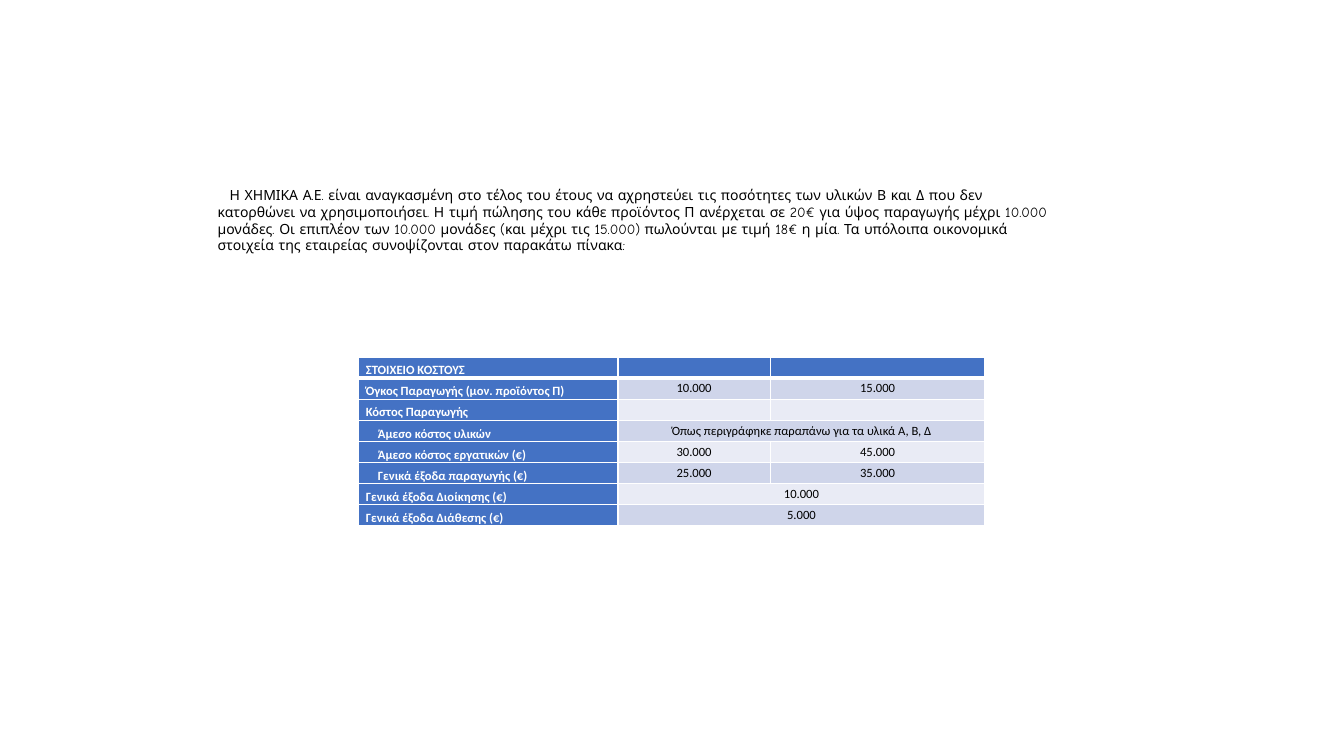
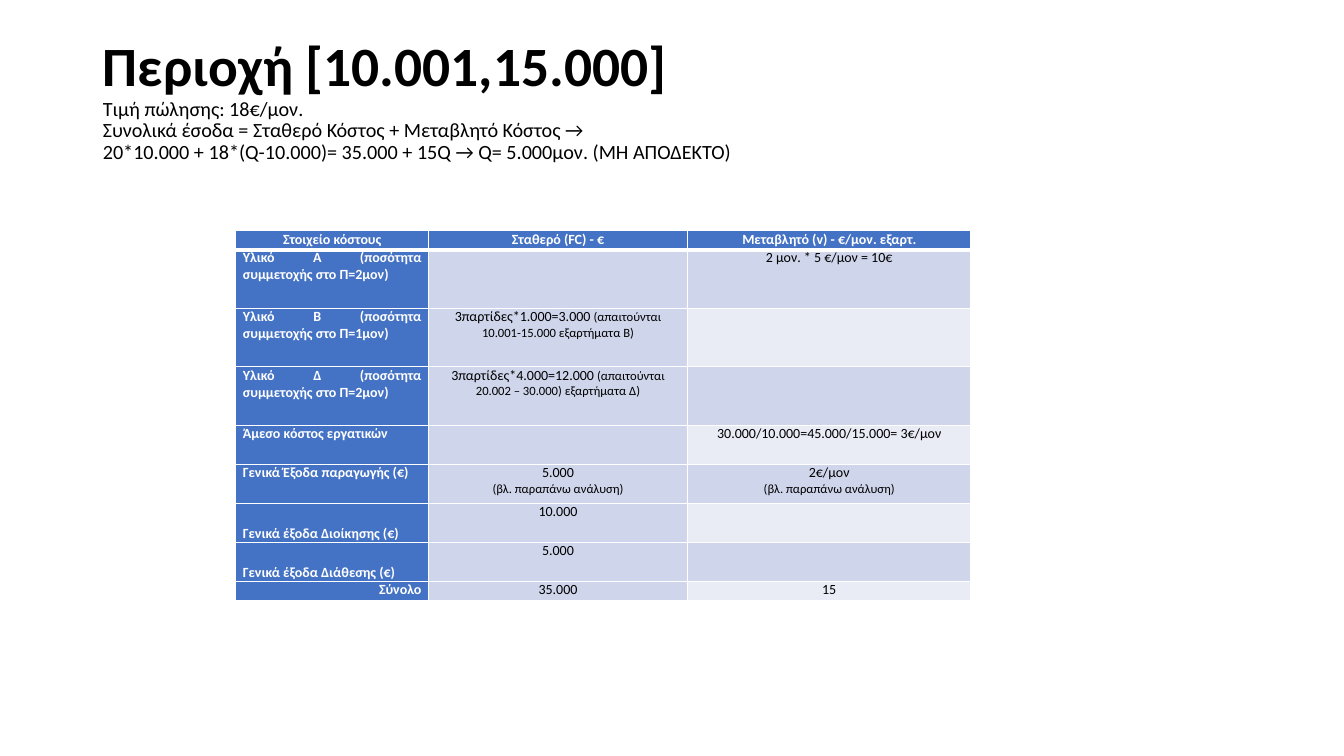
"""Build two slides on break-even costing, each with a cost table."""
from dataclasses import dataclass

from lxml.etree import SubElement
from pptx import Presentation
from pptx.dml.color import RGBColor
from pptx.enum.text import MSO_ANCHOR as Anchor, MSO_AUTO_SIZE as AutoSize, PP_ALIGN as Align
from pptx.oxml.ns import qn
from pptx.util import Inches, Length, Pt


@dataclass(frozen=True)
class Theme:
    """Colours, fonts and type sizes shared by the slides."""
    ink: str = "000000"
    paper: str = "FFFFFF"
    accent: str = "4472C4"
    dark_band: str = "CFD5EA"
    light_band: str = "E9EBF5"
    font: str = "Calibri"
    story_font: str = "Comic Neue"
    title_size: float = 39.6
    subtitle_size: float = 14.4
    text_size: float = 10
    small_size: float = 9
    rule: float = 1
    header_rule: float = 3
    indent: float = 0.12
    cell_inset: float = 0.07


THEME = Theme()
WIDTH, HEIGHT = Inches(13.33), Inches(7.5)


def across(percent: float) -> Length:
    """Return a percentage of the slide width."""
    return Length(round(WIDTH * percent / 100))


def down(percent: float) -> Length:
    """Return a percentage of the slide height."""
    return Length(round(HEIGHT * percent / 100))


@dataclass(frozen=True)
class Value:
    """A cell's text with an optional small note, inline or below."""
    text: str = ""
    note: str = ""
    note_below: bool = False


@dataclass(frozen=True)
class CostRow:
    """A row label with its values; a single value spans both columns."""
    label: str
    values: tuple[Value, ...]
    height: float
    align: Align = Align.LEFT
    anchor: Anchor = Anchor.TOP
    indented: bool = False


@dataclass(frozen=True)
class CostTable:
    """Place, columns and rows of a table, in percent of the slide."""
    left: float
    top: float
    columns: tuple[float, ...]
    rows: list[CostRow]
    size: float
    value_anchor: Anchor
    first_striped: int


BLANK = Value()
ANALYSIS = "(βλ. παραπάνω ανάλυση)"
STORY = (
    "Η ΧΗΜΙΚΑ Α.Ε. είναι αναγκασμένη στο τέλος του έτους να αχρηστεύει τις ποσότητες των "
    "υλικών Β και Δ που δεν κατορθώνει να χρησιμοποιήσει. Η τιμή πώλησης του κάθε προϊόντος Π "
    "ανέρχεται σε 20€ για ύψος παραγωγής μέχρι 10.000 μονάδες. Οι επιπλέον των 10.000 μονάδες "
    "(και μέχρι τις 15.000) πωλούνται με τιμή 18€ η μία. Τα υπόλοιπα οικονομικά στοιχεία της "
    "εταιρείας συνοψίζονται στον παρακάτω πίνακα:"
)
TITLE = "Περιοχή [10.001,15.000]"
REVENUE_LINES = [
    "Τιμή πώλησης: 18€/μον.",
    "Συνολικά έσοδα = Σταθερό Κόστος + Μεταβλητό Κόστος →",
    "20*10.000 + 18*(Q-10.000)= 35.000 + 15Q → Q= 5.000μον. (MH ΑΠΟΔΕΚΤΟ)",
]


def budget_row(label: str, *values: str, indented: bool = False, height: float = 2.8) -> CostRow:
    """Return a row of the company's cost data."""
    return CostRow(label, tuple(map(Value, values)), height, anchor=Anchor.BOTTOM, indented=indented)


def material_row(name: str, units: int, fixed: Value, variable: Value) -> CostRow:
    """Return a row for a material and its share in the product."""
    label = f"Υλικό {name} (ποσότητα συμμετοχής στο Π={units}μον)"
    return CostRow(label, (fixed, variable), 7.75, Align.JUSTIFY)


def expense_row(label: str, fixed: Value, variable: Value = BLANK,
                anchor: Anchor = Anchor.TOP) -> CostRow:
    """Return a row for labour or overheads."""
    return CostRow(label, (fixed, variable), 5.17, Align.JUSTIFY, anchor)


BUDGET = CostTable(
    left=26.7, top=47.33, columns=(19.28, 11.33, 15.98), size=THEME.small_size,
    value_anchor=Anchor.MIDDLE, first_striped=1,
    rows=[
        budget_row("ΣΤΟΙΧΕΙΟ ΚΟΣΤΟΥΣ", "", "", height=2.67),
        budget_row("Όγκος Παραγωγής (μον. προϊόντος Π)", "10.000", "15.000"),
        budget_row("Κόστος Παραγωγής", "", ""),
        budget_row("Άμεσο κόστος υλικών", "Όπως περιγράφηκε παραπάνω για τα υλικά Α, Β, Δ",
                   indented=True),
        budget_row("Άμεσο κόστος εργατικών (€)", "30.000", "45.000", indented=True),
        budget_row("Γενικά έξοδα παραγωγής (€)", "25.000", "35.000", indented=True),
        budget_row("Γενικά έξοδα Διοίκησης (€)", "10.000"),
        budget_row("Γενικά έξοδα Διάθεσης (€)", "5.000"),
    ],
)
ANALYSIS_TABLE = CostTable(
    left=17.55, top=30.53, columns=(14.33, 19.28, 21.08), size=THEME.text_size,
    value_anchor=Anchor.TOP, first_striped=2,
    rows=[
        CostRow("Στοιχείο κόστους", (Value("Σταθερό (FC) - €"), Value("Μεταβλητό (v) - €/μον. εξαρτ.")),
                2.5, Align.CENTER),
        material_row("Α", 2, BLANK, Value("2 μον. * 5 €/μον = 10€")),
        material_row("Β", 1, Value("3παρτίδες*1.000=3.000 ", "(απαιτούνται 10.001-15.000 εξαρτήματα Β)"), BLANK),
        material_row("Δ", 2, Value("3παρτίδες*4.000=12.000 ", "(απαιτούνται 20.002 – 30.000) εξαρτήματα Δ)"), BLANK),
        expense_row("Άμεσο κόστος εργατικών", BLANK, Value("30.000/10.000=45.000/15.000= 3€/μον")),
        expense_row("Γενικά Έξοδα παραγωγής (€)", Value("5.000", ANALYSIS, True), Value("2€/μον", ANALYSIS, True)),
        expense_row("Γενικά έξοδα Διοίκησης (€)", Value("10.000"), anchor=Anchor.BOTTOM),
        expense_row("Γενικά έξοδα Διάθεσης (€)", Value("5.000"), anchor=Anchor.BOTTOM),
        CostRow("Σύνολο", (Value("35.000"), Value("15")), 2.5, Align.RIGHT),
    ],
)


def style_paragraph(paragraph, size: float, color: str = THEME.ink, bold: bool = False,
                    align: Align = Align.LEFT, font: str = THEME.font) -> None:
    """Set a paragraph's alignment and type."""
    paragraph.alignment = align
    paragraph.font.name = font
    paragraph.font.size = Pt(size)
    paragraph.font.bold = bold
    paragraph.font.color.rgb = RGBColor.from_string(color)


def indent_first_line(paragraph) -> None:
    """Indent the first line of a paragraph."""
    properties = paragraph._p.get_or_add_pPr()
    properties.set("marL", "0")
    properties.set("indent", str(Inches(THEME.indent)))


def write_value(cell, value: Value, size: float, color: str, bold: bool, align: Align) -> None:
    """Write a value and its small note into a cell."""
    frame = cell.text_frame
    paragraph = frame.paragraphs[0]
    style_paragraph(paragraph, size, color, bold, align)
    if value.text:
        paragraph.add_run().text = value.text
    else:
        SubElement(paragraph._p, qn("a:endParaRPr"), sz=str(round(size * 100)))
    if value.note and value.note_below:
        note = frame.add_paragraph()
        note.text = value.note
        style_paragraph(note, THEME.small_size, color, bold, align)
    elif value.note:
        note = paragraph.add_run()
        note.text = value.note
        note.font.size = Pt(THEME.small_size)


def dress_cell(cell, fill: str, row: int) -> None:
    """Set a cell's insets, borders and fill."""
    cell.margin_left = cell.margin_right = Inches(THEME.cell_inset)
    cell.margin_top = cell.margin_bottom = 0
    heavy_side = {0: "lnB", 1: "lnT"}.get(row)
    for side in ("lnL", "lnR", "lnT", "lnB"):
        weight = THEME.header_rule if side == heavy_side else THEME.rule
        border = SubElement(cell._tc.get_or_add_tcPr(), qn(f"a:{side}"), w=str(Pt(weight)))
        SubElement(SubElement(border, qn("a:solidFill")), qn("a:srgbClr"), val=THEME.paper)
    cell.fill.solid()
    cell.fill.fore_color.rgb = RGBColor.from_string(fill)


def draw_cost_table(slide, plan: CostTable) -> None:
    """Draw a cost table with a blue header row and label column."""
    heights = [row.height for row in plan.rows]
    table = slide.shapes.add_table(
        len(plan.rows), len(plan.columns), across(plan.left), down(plan.top),
        across(sum(plan.columns)), down(sum(heights))).table
    for column, width in zip(table.columns, plan.columns):
        column.width = across(width)
    for index, row in enumerate(plan.rows):
        table.rows[index].height = down(row.height)
        for column in range(len(plan.columns)):
            heading = index == 0 or column == 0
            striped = column >= plan.first_striped and index % 2 == 0
            band = THEME.light_band if striped else THEME.dark_band
            dress_cell(table.cell(index, column), THEME.accent if heading else band, index)
        if len(row.values) == 1:
            table.cell(index, 1).merge(table.cell(index, 2))
        for column, value in enumerate((Value(row.label), *row.values)):
            cell = table.cell(index, column)
            heading = index == 0 or column == 0
            cell.vertical_anchor = row.anchor if column == 0 else plan.value_anchor
            write_value(cell, value, plan.size, THEME.paper if heading else THEME.ink, heading,
                        row.align if column == 0 else Align.CENTER)
        if row.indented:
            indent_first_line(table.cell(index, 0).text_frame.paragraphs[0])


def draw_story(slide) -> None:
    """Draw the paragraph that states the problem."""
    frame = slide.shapes.add_textbox(across(15.45), down(24), across(64.22), down(10.4)).text_frame
    frame.word_wrap = True
    paragraph = frame.paragraphs[0]
    paragraph.text = STORY
    indent_first_line(paragraph)
    style_paragraph(paragraph, THEME.text_size, font=THEME.story_font)


def draw_title(slide) -> None:
    """Fill the title with the range and its revenue equation."""
    title = slide.shapes.title
    title.left, title.top = across(6.9), down(5.13)
    title.width, title.height = across(86.27), down(19.33)
    frame = title.text_frame
    frame.word_wrap = True
    frame.auto_size = AutoSize.NONE
    frame.vertical_anchor = Anchor.TOP
    frame.margin_top = 0
    frame.text = "\n".join([TITLE, *REVENUE_LINES])
    for index, paragraph in enumerate(frame.paragraphs):
        size = THEME.subtitle_size if index else THEME.title_size
        style_paragraph(paragraph, size, bold=index == 0)
        paragraph.line_spacing = 0.9


def main() -> None:
    """Build and save the presentation."""
    deck = Presentation()
    deck.slide_width, deck.slide_height = WIDTH, HEIGHT
    title_only, blank = deck.slide_layouts[5], deck.slide_layouts[6]

    problem = deck.slides.add_slide(blank)
    draw_story(problem)
    draw_cost_table(problem, BUDGET)

    solution = deck.slides.add_slide(title_only)
    draw_title(solution)
    draw_cost_table(solution, ANALYSIS_TABLE)

    deck.save("out.pptx")


if __name__ == "__main__":
    main()
